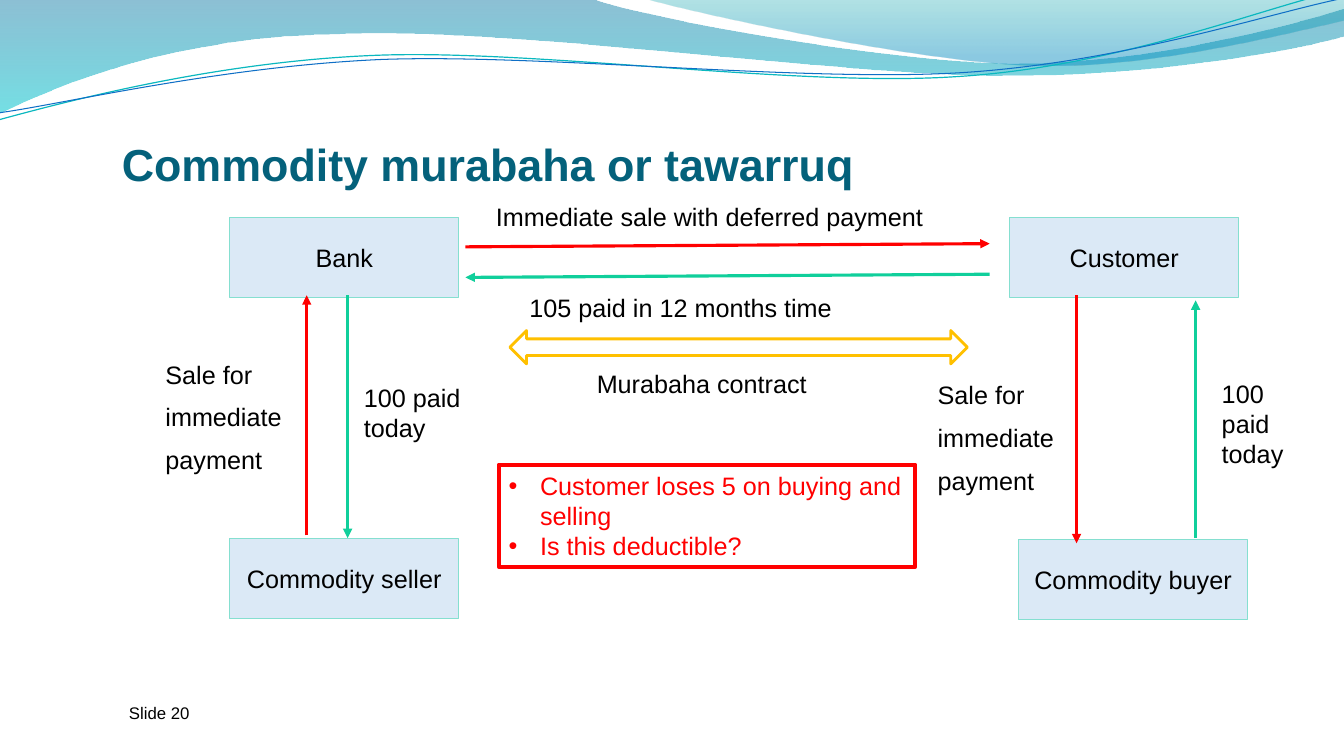
import pptx
import pptx.util
import pptx.dml.color
import pptx.enum.shapes
import pptx.enum.text
import pptx.oxml
import pptx.oxml.ns
from lxml import etree

Cm, Pt = pptx.util.Cm, pptx.util.Pt
RGBColor = pptx.dml.color.RGBColor
SHAPES = pptx.enum.shapes.MSO_SHAPE
ALIGN = pptx.enum.text.PP_ALIGN
ANCHOR = pptx.enum.text.MSO_ANCHOR
qn = pptx.oxml.ns.qn

BLACK = RGBColor(0x00, 0x00, 0x00)
RED = RGBColor(0xFF, 0x00, 0x00)
GREEN = RGBColor(0x10, 0xCF, 0x9B)
AMBER = RGBColor(0xFF, 0xC0, 0x00)
BLUE = RGBColor(0x0F, 0x6F, 0xC6)
MINT = RGBColor(0x85, 0xDF, 0xD0)
TITLE_TEAL = RGBColor(0x04, 0x61, 0x7B)
DEEP_BLUE = RGBColor(0x00, 0x74, 0xA1)
CYAN = RGBColor(0x00, 0xC6, 0xCF)
SEA_GREEN = RGBColor(0x00, 0xA1, 0xA9)
SKY_BLUE = RGBColor(0x00, 0x8B, 0xBF)
TURQUOISE = RGBColor(0x0A, 0xB8, 0xBF)

FONT = "Arial"
TITLE = "Commodity murabaha or tawarruq"
PARTY_SIZE = (5.77, 2.01)
PARTIES = [
    ("Bank", (5.79, 5.48)),
    ("Commodity seller", (5.79, 13.57)),
    ("Commodity buyer", (25.67, 13.6)),
    ("Customer", (25.45, 5.48)),
]
LABELS = [
    ("100 paid today", (8.92, 9.5, 3.38, 1.8), 18),
    ("Sale for\nimmediate\npayment", (3.92, 8.92, 3.96, 3.33), 18),
    ("Immediate sale with deferred payment", (12.25, 4.95, 11.28, 1.02), 18),
    ("105 paid in 12 months time", (13.09, 7.24, 8.59, 1.02), 18),
    ("100 paid today", (30.54, 9.4, 2.67, 2.57), 18),
    ("Sale for\nimmediate\npayment", (23.38, 9.44, 4.57, 3.33), 18),
    ("Murabaha contract", (14.79, 9.16, 6.88, 1.02), 18),
    ("Slide 20", (3, 17.58, 5.92, 1.02), 12),
]
FLOWS = [
    ((27.13, 7.44), (27.13, 13.69), RED),
    ((7.73, 13.49), (7.73, 7.44), RED),
    ((11.73, 6.22), (24.94, 6.14), RED),
    ((8.76, 7.44), (8.76, 13.56), GREEN),
    ((24.94, 6.91), (11.73, 6.99), GREEN),
    ((30.13, 13.56), (30.13, 7.57), GREEN),
]
CONTRACT_ARROW = (12.85, 8.33, 11.53, 0.84)
CONCLUSIONS = "Customer loses 5 on buying and selling\nIs this deductible?"
CONCLUSION_BOX = (12.57, 11.71, 10.5, 2.57)

WAVES = [
    ((0, 0), [
        [(14.91, -0.03)],
        [(16.1, 0.43), (22.48, 1.6), (25.68, 1.6)],
        [(28.91, 1.6), (32.46, 0.66), (33.86, 0.23)],
        [(33.91, 0.91)],
        [(33.3, 1.12), (29.46, 1.93), (25.25, 1.91)],
        [(21.06, 1.91), (12.93, 0.71), (8.71, 0.86)],
        [(4.37, 0.91), (1.55, 2.11), (-0.03, 2.87)],
    ], [(0, DEEP_BLUE, 45), (1, CYAN, 55)]),
    ((16.23, -0.03), [
        [(17.25, 0.28), (23.09, 1.57), (26.04, 1.65)],
        [(28.98, 1.75), (32.56, 0.81), (33.86, 0.53)],
        [(33.86, 0)],
    ], [(0, SEA_GREEN, 30), (0.8, SKY_BLUE, 45)]),
]
RIPPLES = [
    ((-0.03, 3.02), [
        [(1.63, 2.57), (5.36, 1.57), (9.37, 1.4)],
        [(13.39, 1.22), (20.07, 2.21), (24.13, 1.93)],
        [(28.19, 1.68), (31.8, 0.2), (33.81, -0.25)],
    ], TURQUOISE, 0.85),
    ((0, 2.84), [
        [(1.6, 2.62), (5.54, 1.68), (9.6, 1.5)],
        [(13.64, 1.35), (20.22, 2.08), (24.26, 1.83)],
        [(28.32, 1.57), (31.88, 0.36), (33.88, -0.05)],
    ], BLUE, 0.75),
]


def lengths(values):
    return [Cm(value) for value in values]


def set_alpha(color_element, percent):
    etree.SubElement(color_element, qn("a:alpha")).set("val", str(percent * 1000))


def set_line(shape, color, width):
    shape.line.color.rgb = color
    shape.line.width = Pt(width)


def format_text(frame, text, size, color, align=ALIGN.LEFT, bold=False):
    frame.text = text
    for paragraph in frame.paragraphs:
        paragraph.alignment = align
        for run in paragraph.runs:
            run.font.name = FONT
            run.font.size = Pt(size)
            run.font.bold = bold
            run.font.color.rgb = color


def add_curve(slide, start, segments, close):
    builder = slide.shapes.build_freeform(*lengths(start))
    builder.add_line_segments(
        [lengths(point) for segment in segments for point in segment], close=close)
    curve = builder.convert_to_shape()
    curve.shadow.inherit = False
    steps = iter(list(curve._element.iter(qn("a:lnTo"))))
    for segment in segments:
        parts = [next(steps) for _ in segment]
        if len(parts) == 3:
            bezier = etree.Element(qn("a:cubicBezTo"))
            parts[0].addprevious(bezier)
            for part in parts:
                bezier.append(part[0])
                part.getparent().remove(part)
    return curve


def add_flow(slide, start, end, color):
    flow = slide.shapes.add_connector(
        pptx.enum.shapes.MSO_CONNECTOR.STRAIGHT, *lengths(start + end))
    set_line(flow, color, 2.25)
    etree.SubElement(flow.line._get_or_add_ln(), qn("a:tailEnd")).set("type", "triangle")
    etree.SubElement(flow._element.spPr, qn("a:effectLst"))


def main():
    deck = pptx.Presentation()
    deck.slide_width, deck.slide_height = Cm(33.87), Cm(19.05)
    slide = deck.slides.add_slide(deck.slide_layouts[5])

    for start, segments, stops in WAVES:
        wave = add_curve(slide, start, segments, True)
        wave.line.fill.background()
        wave.fill.gradient()
        wave.fill.gradient_angle = 270
        for stop, (position, color, alpha) in zip(wave.fill.gradient_stops, stops):
            stop.position = position
            stop.color.rgb = color
            set_alpha(stop._gs.find(qn("a:srgbClr")), alpha)
    for start, segments, color, width in RIPPLES:
        ripple = add_curve(slide, start, segments, False)
        ripple.fill.background()
        set_line(ripple, color, width)

    title = slide.shapes.title
    title.left, title.top, title.width, title.height = lengths((3.07, 2.69, 18.87, 2.11))
    frame = title.text_frame
    frame.margin_left = frame.margin_right = frame.margin_bottom = 0
    frame.vertical_anchor = ANCHOR.BOTTOM
    frame.auto_size = pptx.enum.text.MSO_AUTO_SIZE.NONE
    format_text(frame, TITLE, 32, TITLE_TEAL, bold=True)

    for name, corner in PARTIES:
        party = slide.shapes.add_shape(SHAPES.RECTANGLE, *lengths(corner + PARTY_SIZE))
        party.shadow.inherit = False
        party.fill.solid()
        party.fill.fore_color.rgb = BLUE
        set_alpha(party._element.spPr.find(qn("a:solidFill"))[0], 15)
        set_line(party, MINT, 0.75)
        party.text_frame.word_wrap = False
        party.text_frame.vertical_anchor = ANCHOR.MIDDLE
        format_text(party.text_frame, name, 18, BLACK, ALIGN.CENTER)

    for text, box, size in LABELS:
        label = slide.shapes.add_textbox(*lengths(box))
        label.text_frame.word_wrap = True
        format_text(label.text_frame, text, size, BLACK)
        for paragraph in label.text_frame.paragraphs[1:]:
            paragraph.space_before = Pt(9)

    for start, end, color in FLOWS:
        add_flow(slide, start, end, color)

    contract = slide.shapes.add_shape(SHAPES.LEFT_RIGHT_ARROW, *lengths(CONTRACT_ARROW))
    contract.shadow.inherit = False
    contract.fill.background()
    set_line(contract, AMBER, 2)

    conclusion = slide.shapes.add_shape(SHAPES.RECTANGLE, *lengths(CONCLUSION_BOX))
    conclusion.shadow.inherit = False
    conclusion.fill.background()
    set_line(conclusion, RED, 3)
    conclusion.text_frame.word_wrap = True
    format_text(conclusion.text_frame, CONCLUSIONS, 18, RED)
    for paragraph in conclusion.text_frame.paragraphs:
        properties = paragraph._p.get_or_add_pPr()
        properties.set("marL", str(Cm(0.79)))
        properties.set("indent", str(-Cm(0.79)))
        etree.SubElement(properties, qn("a:buFont")).set("typeface", FONT)
        etree.SubElement(properties, qn("a:buChar")).set("char", "•")

    deck.save("out.pptx")


if __name__ == "__main__":
    main()
